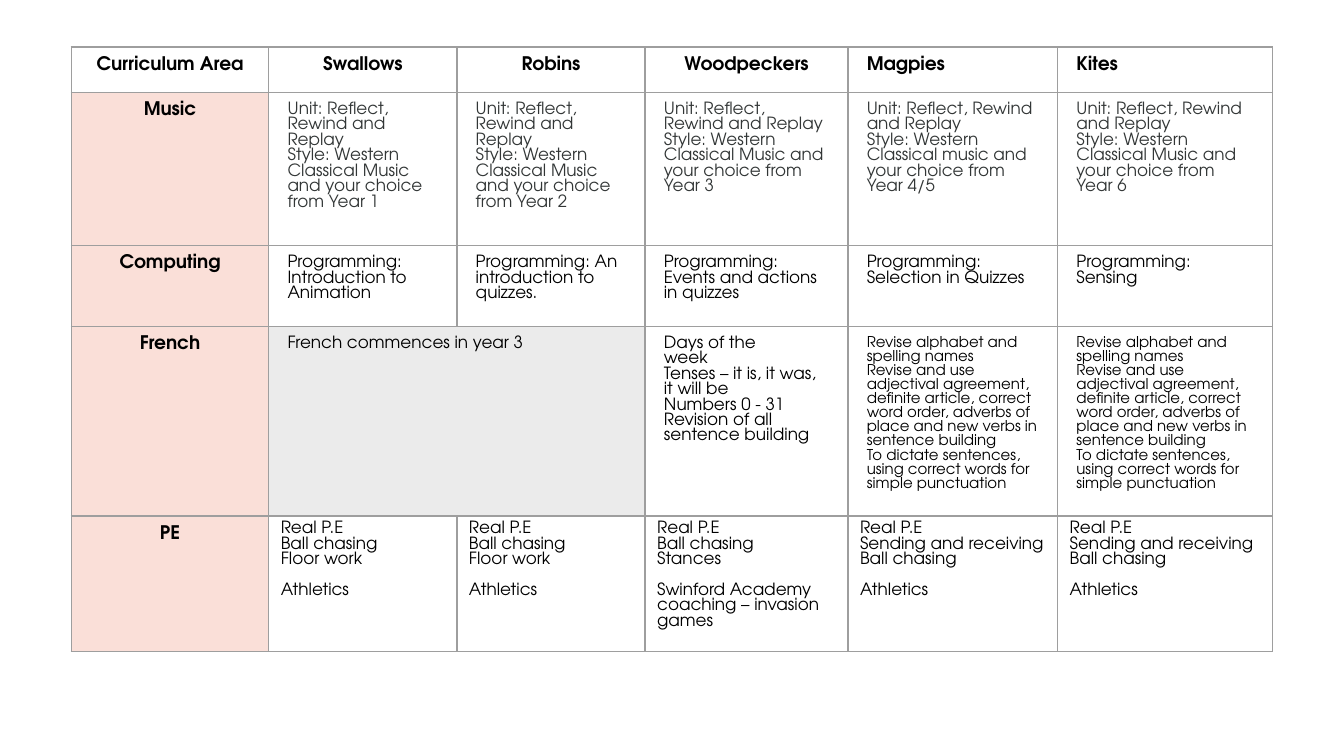
from lxml import etree
from pptx import Presentation
from pptx.dml.color import RGBColor
from pptx.enum.shapes import MSO_SHAPE as Shape
from pptx.enum.text import PP_ALIGN as Align
from pptx.oxml.ns import qn
from pptx.util import Inches, Pt

THEME = {
    "font": "TeX Gyre Adventor",
    "black": "000000", "slate": "323636",
    "pink": "FADFD8", "grey": "EBEBEB", "white": "FFFFFF", "border": "9E9E9E",
    "heading": 10, "body": 9, "small": 8, "border_width": 0.75,
}

# Content: cells are lists of paragraphs; None is covered by a merge
HEADINGS = ["Curriculum Area", "Swallows", "Robins", "Woodpeckers", "Magpies", "Kites"]
# Verb, style, year and the space after each label
MUSIC_UNITS = [
    ("Reflect", "Music", "1", "\u00a0"),
    ("Reﬂect", "Music", "2", "\u00a0"),
    ("Reflect", "Music", "3", " "),
    ("Reﬂect", "music", "4/5", "\u00a0"),
    ("Reﬂect", "Music", "6", "\u00a0"),
]
FRENCH_UPPER = [
    "Revise alphabet and spelling names",
    "Revise and use adjectival agreement, definite article, correct word order, "
    "adverbs of place and new verbs in sentence building",
    "To dictate sentences, using correct words for simple punctuation",
]
FLOOR_WORK = ["Real P.E", "Ball chasing", "Floor work", "Athletics"]
AREAS = {
    "Music": [[f"Unit:{space}{verb}, Rewind and Replay",
               f"Style:{space}Western Classical {style} and your choice from Year {year}"]
              for verb, style, year, space in MUSIC_UNITS],
    "Computing": [[f"Programming: {topic}"] for topic in (
        "Introduction to Animation", "An introduction to quizzes.",
        "Events and actions in quizzes", "Selection in Quizzes", "Sensing")],
    "French": [["French commences in year 3"], None,
               ["Days of the", "week", "Tenses – it is, it was, it will be",
                "Numbers 0 - 31", "Revision of all", "sentence building"],
               FRENCH_UPPER, FRENCH_UPPER],
    "PE": [FLOOR_WORK, FLOOR_WORK,
           ["Real P.E", "Ball chasing", "Stances",
            "Swinford Academy", "coaching – invasion", "games"],
           ["Real P.E", "Sending and receiving", "Ball chasing", "Athletics"],
           ["Real P.E", "Sending and receiving Ball chasing", "Athletics"]],
}
# Paragraphs that open the second PE activity, set one line apart
SECOND_ACTIVITIES = ("Athletics", "Swinford Academy")
ACTIVITY_GAP = 8.25

COLUMN_WIDTHS = [1.47, 1.4, 1.4, 1.51, 1.56, 1.6]
ROW_HEIGHTS = [0.34, 1.14, 0.6, 1.41, 1.01]
LEFT, TOP = 0.53, 0.35
WIDE_INSET, NARROW_INSET = (0.14, 0.07), (0.09, 0.04)


def color(name):
    return RGBColor.from_string(THEME[name])


def add_borders(cell):
    properties = cell._tc.get_or_add_tcPr()
    for position, side in enumerate(("lnL", "lnR", "lnT", "lnB")):
        line = etree.Element(qn(f"a:{side}"), w=str(Pt(THEME["border_width"])))
        fill = etree.SubElement(line, qn("a:solidFill"))
        etree.SubElement(fill, qn("a:srgbClr"), val=THEME["border"])
        properties.insert(position, line)


def style_cell(cell, fill=None, inset=WIDE_INSET):
    cell.margin_left = cell.margin_right = Inches(inset[0])
    cell.margin_top = cell.margin_bottom = Inches(inset[1])
    if fill:
        cell.fill.solid()
        cell.fill.fore_color.rgb = color(fill)
    else:
        cell.fill.background()
    add_borders(cell)


def write(cell, paragraphs, size="body", ink="black", bold=False, align=Align.LEFT):
    cell.text_frame.text = "\n".join(paragraphs)
    for para in cell.text_frame.paragraphs:
        para.alignment = align
        if para.text in SECOND_ACTIVITIES:
            para.space_before = Pt(ACTIVITY_GAP)
        for span in para.runs:
            span.font.name = THEME["font"]
            span.font.size = Pt(THEME[size])
            span.font.bold = bold
            span.font.color.rgb = color(ink)


# Widescreen page, 16 by 9
deck = Presentation()
deck.slide_width = Inches(10)
deck.slide_height = deck.slide_width * 9 // 16
page = deck.slides.add_slide(deck.slide_layouts[6])

# White backdrop
backdrop = page.shapes.add_shape(
    Shape.RECTANGLE, 0, 0, deck.slide_width, deck.slide_height)
backdrop.shadow.inherit = False
backdrop.fill.solid()
backdrop.fill.fore_color.rgb = color("white")
backdrop.line.fill.background()

# Table grid
table = page.shapes.add_table(
    len(ROW_HEIGHTS), len(COLUMN_WIDTHS), Inches(LEFT), Inches(TOP),
    Inches(sum(COLUMN_WIDTHS)), Inches(sum(ROW_HEIGHTS))).table
table.first_row = table.horz_banding = False
for column, width in zip(table.columns, COLUMN_WIDTHS):
    column.width = Inches(width)
for row, height in zip(table.rows, ROW_HEIGHTS):
    row.height = Inches(height)

# Heading row: the last two names are left-aligned
for index, heading in enumerate(HEADINGS):
    cell = table.cell(0, index)
    style_cell(cell)
    write(cell, [heading], "heading", bold=True,
          align=Align.CENTER if index < 4 else Align.LEFT)

# One row for each curriculum area
for row_index, (area, entries) in enumerate(AREAS.items(), start=1):
    label = table.cell(row_index, 0)
    style_cell(label, "pink")
    write(label, [area], "heading", bold=True, align=Align.CENTER)
    for index, paragraphs in enumerate(entries, start=1):
        cell = table.cell(row_index, index)
        not_taught = area == "French" and index < 3
        style_cell(cell, "grey" if not_taught else None,
                   NARROW_INSET if area == "PE" else WIDE_INSET)
        if paragraphs:
            write(cell, paragraphs,
                  size="small" if paragraphs is FRENCH_UPPER else "body",
                  ink="slate" if area == "Music" else "black")

# French starts in year 3, so the two youngest classes share a cell
french = list(AREAS).index("French") + 1
table.cell(french, 1).merge(table.cell(french, 2))

deck.save("out.pptx")
